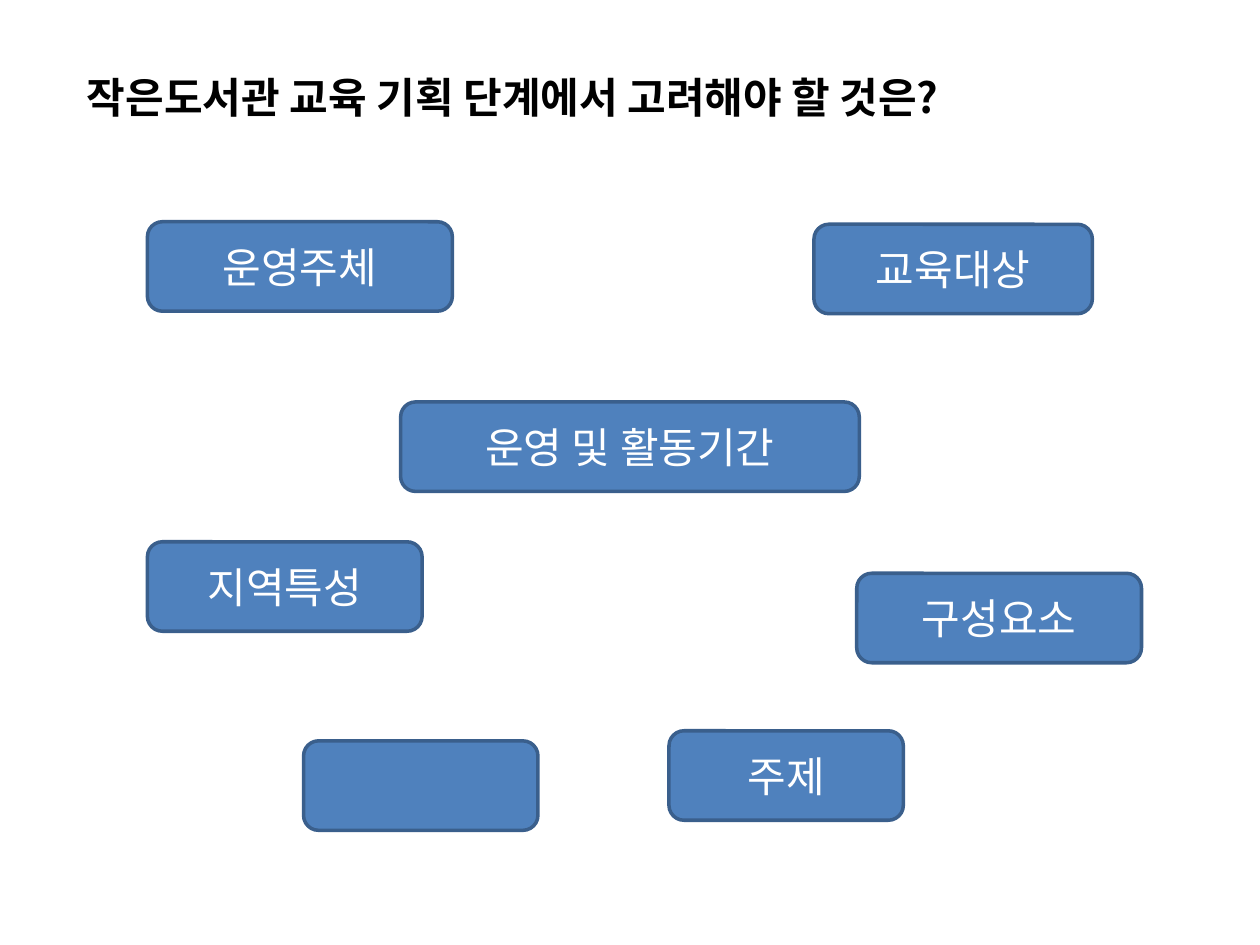
"""Build a slide of points to consider when planning small-library education."""
from typing import NamedTuple

from lxml.etree import SubElement
from pptx import Presentation
from pptx.dml.color import RGBColor
from pptx.enum.shapes import MSO_SHAPE
from pptx.enum.text import MSO_ANCHOR, MSO_AUTO_SIZE, PP_ALIGN
from pptx.oxml.ns import qn
from pptx.slide import Slide
from pptx.text.text import TextFrame
from pptx.util import Inches, Pt

FONT_NAME = "Noto Sans CJK KR"
BLACK = RGBColor(0x00, 0x00, 0x00)
WHITE = RGBColor(0xFF, 0xFF, 0xFF)
BLUE = RGBColor(0x4F, 0x81, 0xBD)
DARK_BLUE = RGBColor(0x3A, 0x5F, 0x8C)
BOX_HEIGHT = 0.71


class Topic(NamedTuple):
    label: str
    left: float
    top: float
    width: float


TITLE = "작은도서관 교육 기획 단계에서 고려해야 할 것은?"
TOPICS = [
    Topic("운영주체", 1.17, 1.76, 2.42),
    Topic("운영 및 활동기간", 3.18, 3.19, 3.64),
    Topic("지역특성", 1.17, 4.3, 2.18),
    Topic("주제", 5.31, 5.8, 1.86),
    Topic("구성요소", 6.8, 4.55, 2.26),
    Topic("교육대상", 6.46, 1.78, 2.21),
    Topic("", 2.41, 5.88, 1.86),
]


def write_text(frame: TextFrame, text: str, color: RGBColor,
               alignment: PP_ALIGN, bold: bool = False) -> None:
    frame.text = text
    frame.word_wrap = True
    frame.vertical_anchor = MSO_ANCHOR.MIDDLE
    para = frame.paragraphs[0]
    para.alignment = alignment
    para.font.size = Pt(24)
    para.font.bold = bold
    para.font.color.rgb = color
    para.font.name = FONT_NAME
    properties = para._p.pPr.find(qn("a:defRPr"))
    SubElement(properties, qn("a:ea"), typeface=FONT_NAME)


def add_title(slide: Slide) -> None:
    title = slide.shapes.title
    title.left, title.top = Inches(0.59), Inches(0.52)
    title.width, title.height = Inches(8.98), Inches(0.5)
    write_text(title.text_frame, TITLE, BLACK, PP_ALIGN.LEFT, bold=True)
    title.text_frame.auto_size = MSO_AUTO_SIZE.NONE


def add_topic(slide: Slide, topic: Topic) -> None:
    box = slide.shapes.add_shape(
        MSO_SHAPE.ROUNDED_RECTANGLE, Inches(topic.left), Inches(topic.top),
        Inches(topic.width), Inches(BOX_HEIGHT))
    box.shadow.inherit = False
    box.fill.solid()
    box.fill.fore_color.rgb = BLUE
    box.line.color.rgb = DARK_BLUE
    box.line.width = Pt(2)
    if topic.label:
        write_text(box.text_frame, topic.label, WHITE, PP_ALIGN.CENTER)


def main() -> None:
    deck = Presentation()
    deck.slide_width, deck.slide_height = Inches(10), Inches(7.5)
    slide = deck.slides.add_slide(deck.slide_layouts[5])
    add_title(slide)
    for topic in TOPICS:
        add_topic(slide, topic)
    deck.save("out.pptx")


if __name__ == "__main__":
    main()
